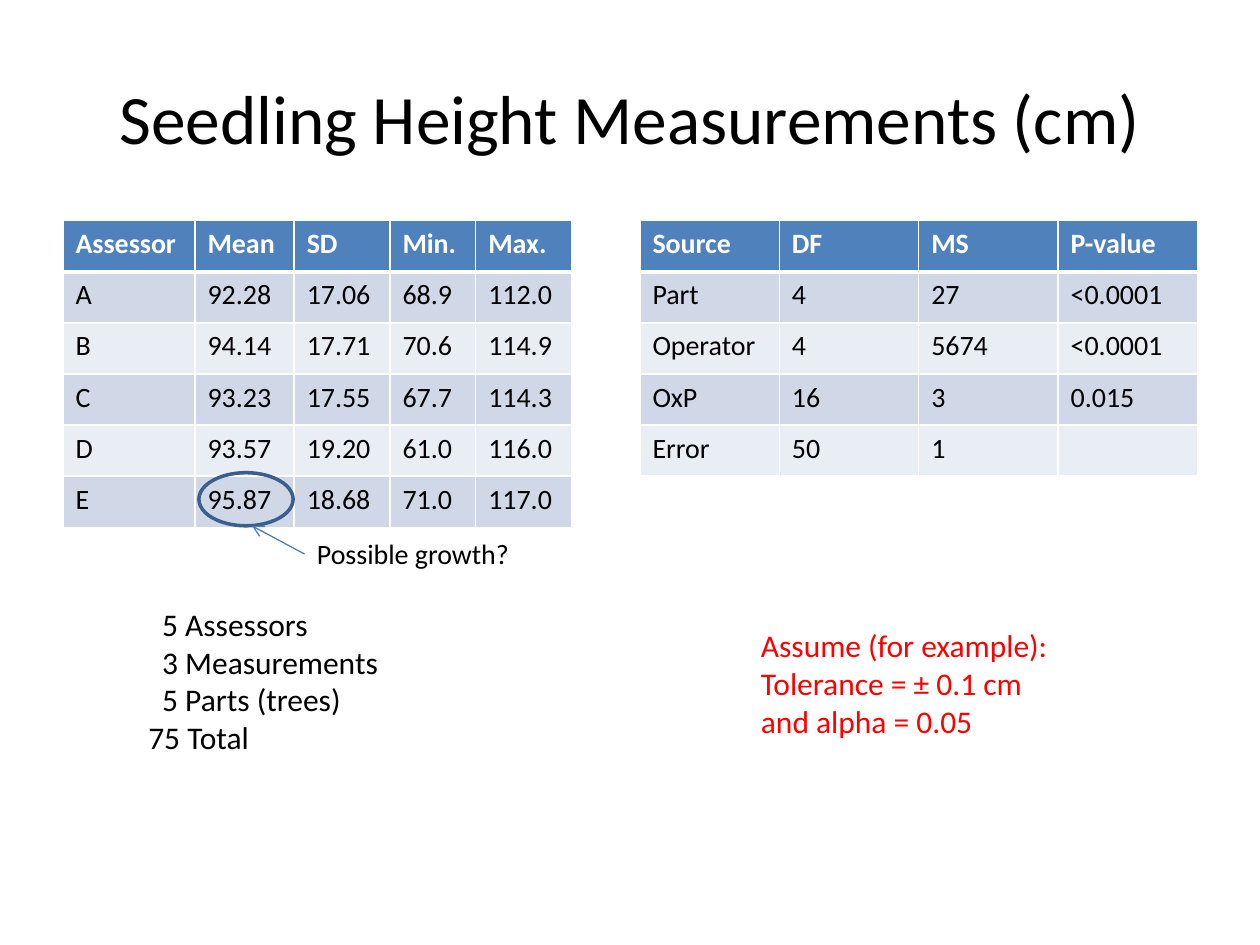
from lxml.etree import SubElement
from pptx import Presentation
from pptx.dml.color import RGBColor
from pptx.enum.shapes import MSO_CONNECTOR, MSO_SHAPE
from pptx.enum.text import MSO_ANCHOR, PP_ALIGN
from pptx.oxml.ns import qn
from pptx.util import Cm, Pt

BLACK = RGBColor(0x00, 0x00, 0x00)
WHITE = RGBColor(0xFF, 0xFF, 0xFF)
RED = RGBColor(0xFF, 0x00, 0x00)
HEADER_BLUE = RGBColor(0x4F, 0x81, 0xBD)
BAND_DARK = RGBColor(0xD0, 0xD8, 0xE8)
BAND_LIGHT = RGBColor(0xE9, 0xED, 0xF4)
RING_BLUE = RGBColor(0x3A, 0x5F, 0x8C)
ARROW_BLUE = RGBColor(0x4B, 0x7E, 0xBC)

FONT = "Calibri"
ROW_HEIGHT = 1.03

ASSESSORS = [
    ["Assessor", "Mean", "SD", "Min.", "Max."],
    ["A", "92.28", "17.06", "68.9", "112.0"],
    ["B", "94.14", "17.71", "70.6", "114.9"],
    ["C", "93.23", "17.55", "67.7", "114.3"],
    ["D", "93.57", "19.20", "61.0", "116.0"],
    ["E", "95.87", "18.68", "71.0", "117.0"],
]
VARIANCE = [
    ["Source", "DF", "MS", "P-value"],
    ["Part", "4", "27", "<0.0001"],
    ["Operator", "4", "5674", "<0.0001"],
    ["OxP", "16", "3", "0.015"],
    ["Error", "50", "1", ""],
]
COUNTS = ["5 Assessors", "3 Measurements", "5 Parts (trees)", "75 Total"]
ASSUMPTIONS = ["Assume (for example):", "Tolerance = ± 0.1 cm", "and alpha = 0.05"]


def write(paragraph, text, size=16, color=BLACK, bold=False, indent=0, align=PP_ALIGN.LEFT):
    """Put formatted text, optionally indented in cm, into a paragraph."""
    paragraph.alignment = align
    if indent:
        properties = paragraph._p.get_or_add_pPr()
        properties.set("marL", str(Cm(indent)))
        properties.set("indent", "0")
    if text:
        run = paragraph.add_run()
        run.text = text
        run.font.name = FONT
        run.font.size = Pt(size)
        run.font.bold = bold
        run.font.color.rgb = color


def add_lines(slide, box, lines, indents=None, wrap=False, **style):
    """Add a text box with one paragraph per line and return it."""
    note = slide.shapes.add_textbox(*map(Cm, box))
    frame = note.text_frame
    frame.word_wrap = wrap
    for index, line in enumerate(lines):
        paragraph = frame.add_paragraph() if index else frame.paragraphs[0]
        write(paragraph, line, indent=indents[index] if indents else 0, **style)
    return note


def add_title(slide, box, text):
    """Place and format the title placeholder."""
    title = slide.shapes.title
    title.left, title.top, title.width, title.height = map(Cm, box)
    title.text_frame.vertical_anchor = MSO_ANCHOR.MIDDLE
    write(title.text_frame.paragraphs[0], text, size=39.6, align=PP_ALIGN.CENTER)


def border_cell(cell, bottom_width):
    """Draw white borders around a cell, with its own bottom width."""
    properties = cell._tc.get_or_add_tcPr()
    for side, width in (("L", 1), ("R", 1), ("T", 1), ("B", bottom_width)):
        border = SubElement(properties, qn(f"a:ln{side}"), w=str(Pt(width)))
        fill = SubElement(border, qn("a:solidFill"))
        SubElement(fill, qn("a:srgbClr"), val=str(WHITE))


def add_results(slide, left, top, column_widths, rows):
    """Add a banded table of results with a blue header row."""
    size = Cm(sum(column_widths)), Cm(ROW_HEIGHT * len(rows))
    table = slide.shapes.add_table(
        len(rows), len(column_widths), Cm(left), Cm(top), *size
    ).table
    for column, width in zip(table.columns, column_widths):
        column.width = Cm(width)
    for row_index, values in enumerate(rows):
        table.rows[row_index].height = Cm(ROW_HEIGHT)
        header = row_index == 0
        band = HEADER_BLUE if header else (BAND_LIGHT, BAND_DARK)[row_index % 2]
        for column_index, value in enumerate(values):
            cell = table.cell(row_index, column_index)
            border_cell(cell, bottom_width=3 if header else 1)
            cell.fill.solid()
            cell.fill.fore_color.rgb = band
            write(cell.text_frame.paragraphs[0], value,
                  color=WHITE if header else BLACK, bold=header)


def add_growth_callout(slide, left, top):
    """Ring a mean and point to it from a short question."""
    ring = slide.shapes.add_shape(
        MSO_SHAPE.OVAL, Cm(left), Cm(top), Cm(1.9), Cm(1.07))
    ring.shadow.inherit = False
    ring.fill.background()
    ring.line.color.rgb = RING_BLUE
    ring.line.width = Pt(2)

    question = add_lines(
        slide, (left + 2.13, top + 1.17, 4.45, 0.94), ["Possible growth?"])

    arrow = slide.shapes.add_connector(
        MSO_CONNECTOR.STRAIGHT, Cm(left + 2.13), Cm(top + 1.64),
        Cm(left + 1.07), Cm(top + 1.07))
    arrow.begin_connect(question, 1)
    arrow.line.color.rgb = ARROW_BLUE
    arrow.line.width = Pt(0.75)
    SubElement(arrow.line._get_or_add_ln(), qn("a:tailEnd"), type="arrow")
    SubElement(arrow._element.spPr, qn("a:effectLst"))


def main():
    """Build the slide and save it."""
    presentation = Presentation()
    presentation.slide_width, presentation.slide_height = Cm(25.4), Cm(19.05)
    slide = presentation.slides.add_slide(presentation.slide_layouts[5])
    add_title(slide, (1.27, 0.76, 22.86, 3.18), "Seedling Height Measurements (cm)")
    add_results(slide, 1.27, 4.45, [2.66, 2, 1.93, 1.73, 1.93], ASSESSORS)
    add_results(slide, 12.9, 4.45, [2.81] * 4, VARIANCE)
    add_lines(slide, (2.74, 12.07, 5.21, 4.11), COUNTS,
              indents=[0.28, 0.28, 0.28, 0], wrap=True, size=18)
    add_lines(slide, (15.09, 12.5, 6.35, 2.57), ASSUMPTIONS, size=18, color=RED)
    add_growth_callout(slide, 4.01, 9.53)
    presentation.save("out.pptx")


if __name__ == "__main__":
    main()
